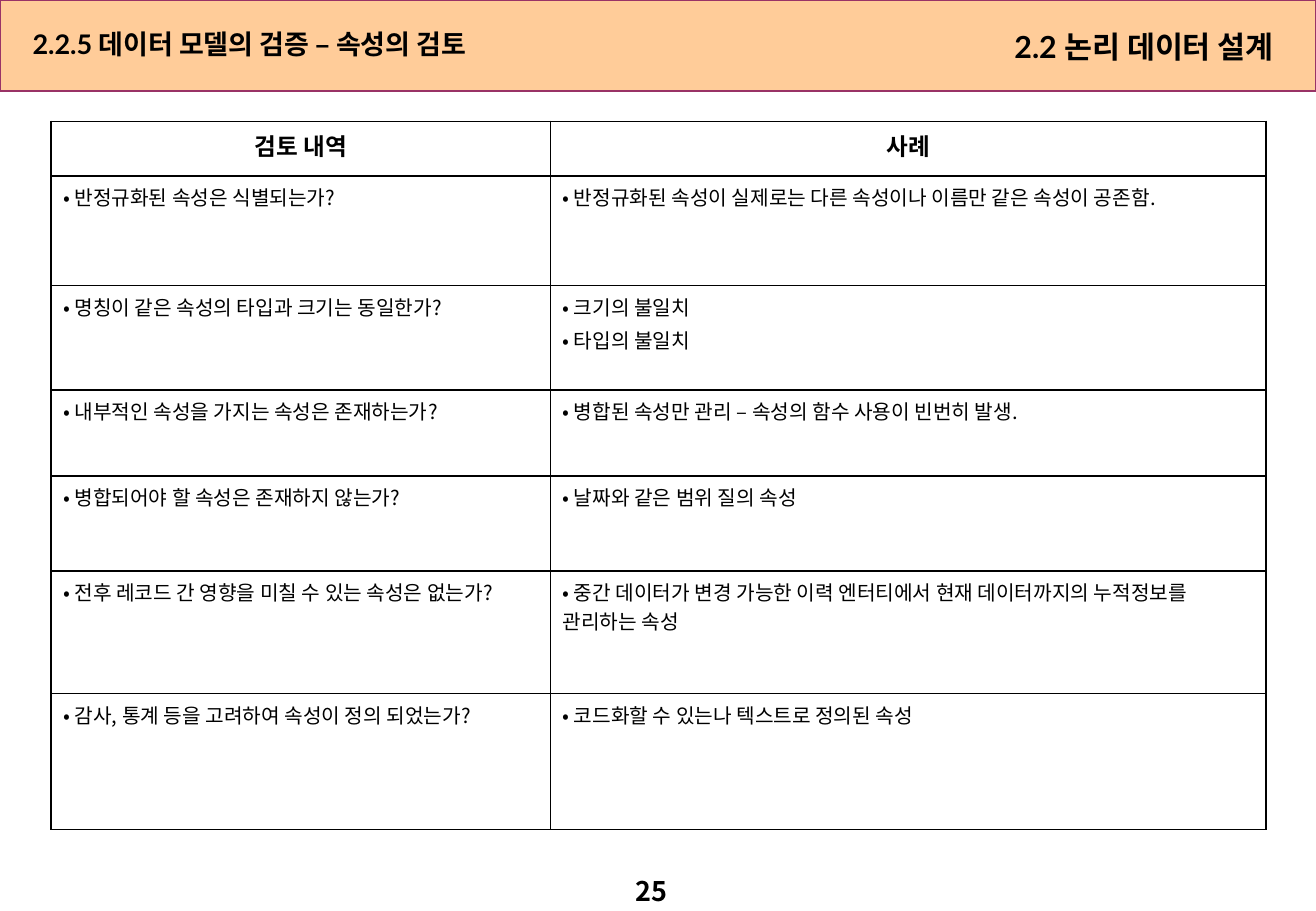
import pptx
import pptx.dml.color
import pptx.enum.shapes
import pptx.enum.text
import pptx.oxml
import pptx.oxml.ns
import pptx.util
import lxml.etree

Inches = pptx.util.Inches
Pt = pptx.util.Pt
ALIGN = pptx.enum.text.PP_ALIGN
qn = pptx.oxml.ns.qn
KOREAN = "Noto Sans CJK KR"


def rgb(color):
    return pptx.dml.color.RGBColor.from_string(color)


def add_run(p, text, size, font, bold):
    r = p.add_run()
    r.text = text
    r.font.size = Pt(size)
    r.font.name = font
    r.font.bold = bold
    r.font.color.rgb = rgb("000000")
    lxml.etree.SubElement(r.font._element, qn("a:ea")).set("typeface", KOREAN)


prs = pptx.Presentation()
prs.slide_width = Inches(10.83)
prs.slide_height = Inches(7.5)
s = prs.slides.add_slide(prs.slide_layouts[6])

band = s.shapes.add_shape(
    pptx.enum.shapes.MSO_SHAPE.RECTANGLE, 0, 0, prs.slide_width, Inches(0.75))
band.shadow.inherit = False
band.fill.solid()
band.fill.fore_color.rgb = rgb("FFCC99")
band.line.color.rgb = rgb("993366")
band.line.width = Pt(0.75)

labels = [
    ("25", 5.13, 7.15, 0.52, 0.37, 16, KOREAN, ALIGN.LEFT, False),
    ("2.2.5 데이터 모델의 검증 – 속성의 검토", 0.17, 0.18, 5.17, 0.37, 16, "Lato", ALIGN.LEFT, True),
    ("2.2 논리 데이터 설계", 5.83, 0.18, 4.75, 0.4, 18, "Lato", ALIGN.RIGHT, True),
]
for text, left, top, width, height, size, font, align, wrap in labels:
    sp = s.shapes.add_textbox(Inches(left), Inches(top), Inches(width), Inches(height))
    tf = sp.text_frame
    tf.word_wrap = wrap
    tf.auto_size = pptx.enum.text.MSO_AUTO_SIZE.SHAPE_TO_FIT_TEXT
    p = tf.paragraphs[0]
    p.alignment = align
    add_run(p, text, size, font, True)

rows = [
    (0.45, "검토 내역", ["사례"]),
    (0.9, "반정규화된 속성은 식별되는가?",
     ["반정규화된 속성이 실제로는 다른 속성이나 이름만 같은 속성이 공존함."]),
    (0.86, "명칭이 같은 속성의 타입과 크기는 동일한가?", ["크기의 불일치", "타입의 불일치"]),
    (0.71, "내부적인 속성을 가지는 속성은 존재하는가?",
     ["병합된 속성만 관리 – 속성의 함수 사용이 빈번히 발생."]),
    (0.78, "병합되어야 할 속성은 존재하지 않는가?", ["날짜와 같은 범위 질의 속성"]),
    (1.01, "전후 레코드 간 영향을 미칠 수 있는 속성은 없는가?",
     ["중간 데이터가 변경 가능한 이력 엔터티에서 현재 데이터까지의 누적정보를 관리하는 속성"]),
    (1.12, "감사, 통계 등을 고려하여 속성이 정의 되었는가?",
     ["코드화할 수 있는나 텍스트로 정의된 속성"]),
]
table = s.shapes.add_table(
    len(rows), 2, Inches(0.42), Inches(1), Inches(10), Inches(5.83)).table
table.horz_banding = False
for column, width in zip(table.columns, (4.11, 5.89)):
    column.width = Inches(width)

for i, (height, check, examples) in enumerate(rows):
    table.rows[i].height = Inches(height)
    for j, lines in enumerate(([check], examples)):
        cell = table.cell(i, j)
        tcPr = cell._tc.get_or_add_tcPr()
        for side in ("lnL", "lnR", "lnT", "lnB"):
            ln = lxml.etree.SubElement(tcPr, qn("a:" + side), w=str(Pt(1)))
            fill = lxml.etree.SubElement(ln, qn("a:solidFill"))
            lxml.etree.SubElement(fill, qn("a:srgbClr"), val="000000")
        cell.fill.background()
        tf = cell.text_frame
        for k, line in enumerate(lines):
            p = tf.add_paragraph() if k else tf.paragraphs[0]
            if k:
                p.space_before = Pt(2.4)
            if i == 0:
                p.alignment = ALIGN.CENTER
                add_run(p, line, 14, KOREAN, True)
                continue
            pPr = p._p.get_or_add_pPr()
            pPr.set("marL", "0")
            pPr.set("indent", "0")
            lxml.etree.SubElement(pPr, qn("a:buFont"), typeface=KOREAN)
            lxml.etree.SubElement(pPr, qn("a:buChar"), char="•")
            before, dash, after = (" " + line).partition("– ")
            for text, font in ((before, KOREAN), (dash, "Times New Roman"), (after, KOREAN)):
                if text:
                    add_run(p, text, 12, font, False)

prs.save("out.pptx")
